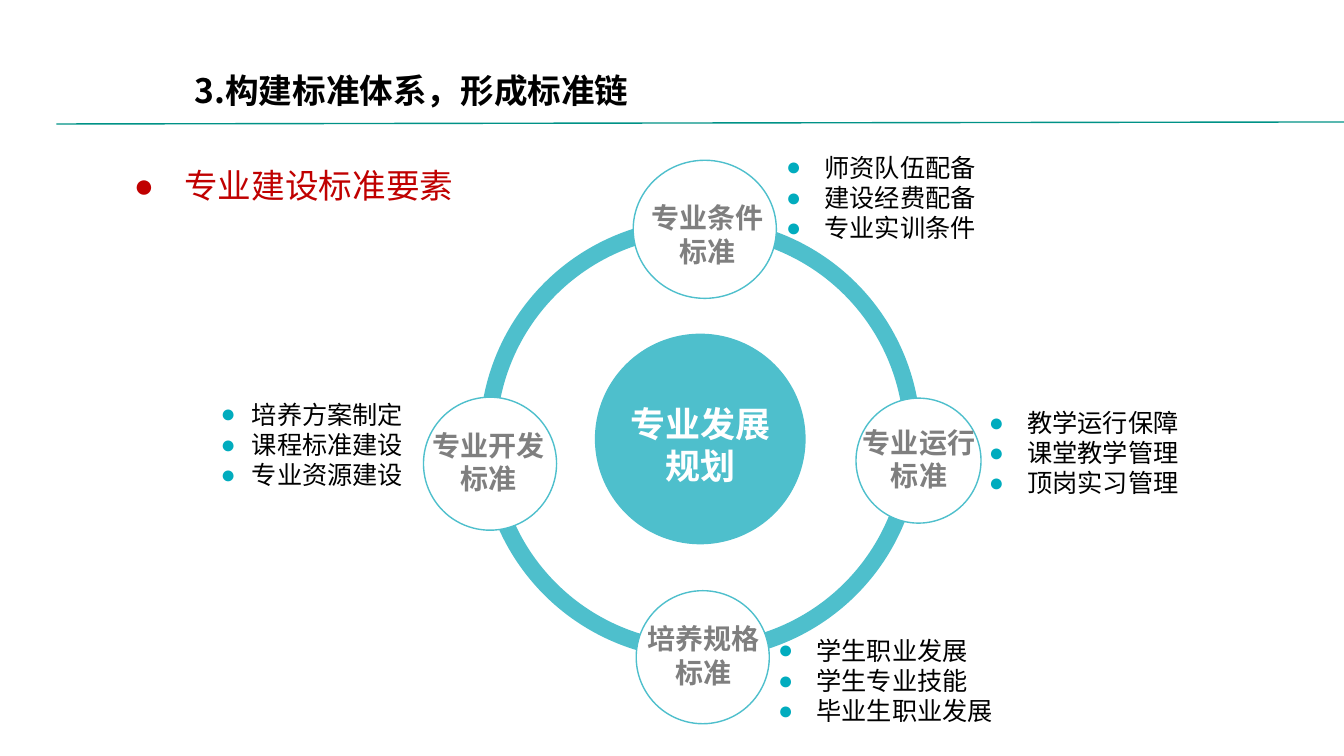
from lxml import etree
from pptx import Presentation
from pptx.dml.color import RGBColor
from pptx.enum.shapes import MSO_CONNECTOR, MSO_SHAPE
from pptx.enum.text import MSO_ANCHOR, PP_ALIGN
from pptx.oxml.ns import qn
from pptx.util import Inches, Pt

OVAL, STRAIGHT = MSO_SHAPE.OVAL, MSO_CONNECTOR.STRAIGHT
TOP, MIDDLE = MSO_ANCHOR.TOP, MSO_ANCHOR.MIDDLE
LEFT, CENTER = PP_ALIGN.LEFT, PP_ALIGN.CENTER

COLORS = {
    "ring": "4EBFCC", "white": "FFFFFF", "label": "7F7F7F", "black": "000000",
    "topic": "C00000", "bullet": "01ACBE", "rule": "009287",
}
HEADING = ("3.构建标准体系，形成标准链", (1.83, 0.64, 5.78, 0.5))
TOPIC = ("专业建设标准要素", (1.23, 1.36, 4.28, 1.01))
RULE = (0.56, 1.23, 13.33, 1.21)
RING = (4.84, 2.25, 4.21, 4.21)
HUB = (5.9, 3.31, 2.09, 2.09)
HUB_LABEL = (["专业发展", "规划"], (5.9, 3.94, 2.09, 0.96))
STANDARDS = [
    (["专业条件", "标准"], (6.28, 1.59, 1.42, 1.37), (6.01, 1.94, 2.01)),
    (["专业运行", "标准"], (8.49, 3.95, 1.24, 1.24), (8.17, 4.17, 1.89)),
    (["专业开发", "标准"], (4.2, 3.94, 1.32, 1.32), (3.82, 4.2, 2.06)),
    (["培养规格", "标准"], (6.31, 5.86, 1.32, 1.32), (5.97, 6.12, 2.01)),
]
ELEMENTS = [
    (["学生职业发展", "学生专业技能", "毕业生职业发展"], (7.62, 6.25), 0.38),
    (["培养方案制定", "课程标准建设", "专业资源建设"], (2.09, 3.91), 0.31),
    (["师资队伍配备", "建设经费配备", "专业实训条件"], (7.7, 1.46), 0.38),
    (["教学运行保障", "课堂教学管理", "顶岗实习管理"], (9.71, 3.99), 0.38),
]
LABEL_HEIGHT = 0.79
ELEMENTS_SIZE = (2.56, 1.02)

FORMATS = {
    "heading": {"name": "Noto Sans CJK SC", "size": Pt(24), "bold": True},
    "topic": {"name": "Calibri", "size": Pt(24), "bold": False},
    "hub": {"name": "Arial", "size": Pt(25), "bold": True},
    "label": {"name": "Arial", "size": Pt(20), "bold": True},
    "element": {"name": "Arial", "size": Pt(18), "bold": False},
}


def rgb(color):
    return RGBColor.from_string(COLORS[color])


def add_bullet(paragraph, indent, color):
    properties = paragraph._p.get_or_add_pPr()
    properties.set("marL", str(Inches(indent)))
    properties.set("indent", str(-Inches(indent)))
    bullet_color = etree.SubElement(properties, qn("a:buClr"))
    etree.SubElement(bullet_color, qn("a:srgbClr"), val=COLORS[color])
    etree.SubElement(properties, qn("a:buFont"), typeface="Arial")
    etree.SubElement(properties, qn("a:buChar"), char="●")


def add_text(shapes, lines, box, style, color, align=LEFT, anchor=TOP,
             bullet=None, spacing=None):
    frame = shapes.add_textbox(*map(Inches, box)).text_frame
    frame.word_wrap = True
    frame.vertical_anchor = anchor
    for index, line in enumerate(lines):
        paragraph = frame.paragraphs[0] if index == 0 else frame.add_paragraph()
        paragraph.alignment = align
        if spacing:
            paragraph.line_spacing = spacing
        if bullet:
            add_bullet(paragraph, *bullet)
        run = paragraph.add_run()
        run.text = line
        for attribute, value in FORMATS[style].items():
            setattr(run.font, attribute, value)
        run.font.color.rgb = rgb(color)


def add_circle(shapes, box, fill=None, line_width=None):
    circle = shapes.add_shape(OVAL, *map(Inches, box))
    circle.shadow.inherit = False
    if fill:
        circle.fill.solid()
        circle.fill.fore_color.rgb = rgb(fill)
    else:
        circle.fill.background()
    if line_width:
        circle.line.color.rgb = rgb("ring")
        circle.line.width = Pt(line_width)
    else:
        circle.line.fill.background()


def add_rule(shapes):
    rule = shapes.add_connector(STRAIGHT, *map(Inches, RULE))
    rule.line.color.rgb = rgb("rule")
    rule.line.width = Pt(1)
    etree.SubElement(rule._element.spPr, qn("a:effectLst"))


def main():
    """Build the slide on the elements of the standards system."""
    deck = Presentation()
    deck.slide_width, deck.slide_height = Inches(13.33), Inches(7.5)
    shapes = deck.slides.add_slide(deck.slide_layouts[6]).shapes

    topic, topic_box = TOPIC
    add_text(shapes, [topic], topic_box, "topic", "topic", anchor=MIDDLE,
             bullet=(0.5, "topic"), spacing=0.9)

    wheel = shapes.add_group_shape().shapes
    add_circle(wheel, RING, line_width=12)
    add_circle(wheel, HUB, fill="ring")
    add_text(shapes, *HUB_LABEL, "hub", "white", CENTER)

    for label, circle_box, label_place in STANDARDS:
        standard = shapes.add_group_shape().shapes
        add_circle(standard, circle_box, "white", 1)
        add_text(standard, label, (*label_place, LABEL_HEIGHT), "label", "label", CENTER)

    for elements, corner, indent in ELEMENTS:
        add_text(shapes, elements, corner + ELEMENTS_SIZE, "element", "black",
                 bullet=(indent, "bullet"))

    heading, heading_box = HEADING
    add_text(shapes, [heading], heading_box, "heading", "black")
    add_rule(shapes)
    deck.save("out.pptx")


if __name__ == "__main__":
    main()
